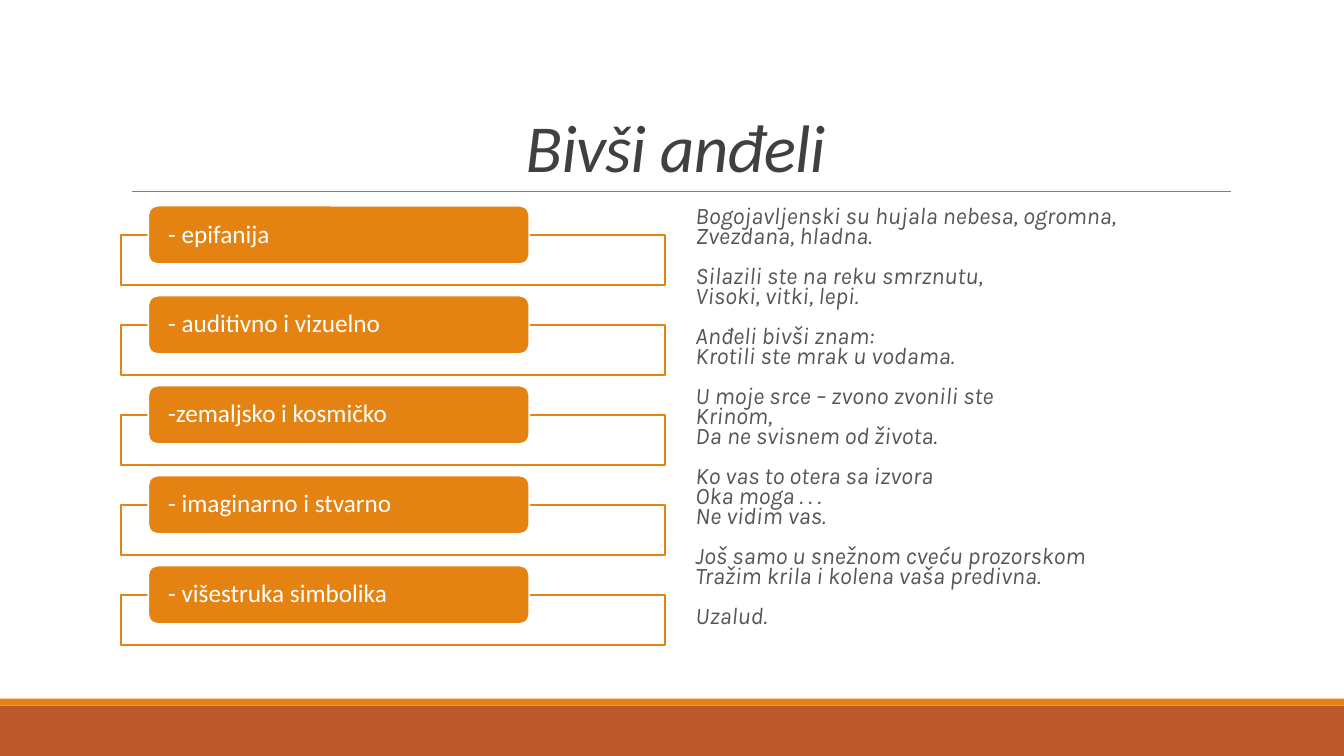
from dataclasses import dataclass

from lxml.etree import SubElement
from pptx import Presentation
from pptx.dml.color import RGBColor
from pptx.enum.shapes import MSO_CONNECTOR as CONN, MSO_SHAPE as SHAPE
from pptx.enum.text import MSO_ANCHOR as ANCHOR, PP_ALIGN as ALIGN
from pptx.oxml.ns import qn
from pptx.util import Inches, Pt


@dataclass(frozen=True)
class Theme:
    """Colours, fonts and type sizes of the slide."""
    accent: str = "E48312"
    footer: str = "BD582C"
    rule: str = "808080"
    title: str = "404040"
    body: str = "565656"
    white: str = "FFFFFF"
    font: str = "Calibri"
    verse_font: str = "Karla"
    title_pt: float = 48
    label_pt: float = 18
    verse_pt: float = 17
    stanza_gap_pt: float = 14.3


T = Theme()
W, H = 13.33, 7.5

TITLE = "Bivši anđeli"
MOTIFS = [
    "- epifanija",
    "- auditivno i vizuelno",
    "-zemaljsko i kosmičko",
    "- imaginarno i stvarno",
    "- višestruka simbolika",
]
STANZAS = [
    ["Bogojavljenski su hujala nebesa, ogromna,", "Zvezdana, hladna."],
    ["Silazili ste na reku smrznutu,", "Visoki, vitki, lepi."],
    ["Anđeli bivši znam:", "Krotili ste mrak u vodama."],
    ["U moje srce – zvono zvonili ste", "Krinom,", "Da ne svisnem od života."],
    ["Ko vas to otera sa izvora", "Oka moga . . .", "Ne vidim vas."],
    ["Još samo u snežnom cveću prozorskom", "Tražim krila i kolena vaša predivna."],
    ["Uzalud."],
]


def rgb(color):
    """Turn a hex string into a colour."""
    return RGBColor.from_string(color)


def add_box(slide, kind, box, fill, line=None):
    """Add a filled shape with an optional outline."""
    sp = slide.shapes.add_shape(kind, *map(Inches, box))
    sp.shadow.inherit = False
    sp.fill.solid()
    sp.fill.fore_color.rgb = rgb(fill)
    if line:
        sp.line.color.rgb = rgb(line)
        sp.line.width = Pt(1.25)
    else:
        sp.line.fill.background()
    return sp


def set_text(sp, text, font, size, color, spacing, anchor, insets, align=ALIGN.LEFT, italic=False):
    """Fill a shape with uniformly formatted text."""
    tf = sp.text_frame
    tf.word_wrap = True
    tf.vertical_anchor = anchor
    tf.margin_left = tf.margin_right = Inches(insets[0])
    tf.margin_top = tf.margin_bottom = Inches(insets[1])
    tf.text = text
    for p in tf.paragraphs:
        p.alignment = align
        p.line_spacing = spacing
        for r in p.runs:
            r.font.name = font
            r.font.size = Pt(size)
            r.font.italic = italic
            r.font.color.rgb = rgb(color)
    return tf


def add_footer(slide, x, y, w, h):
    """Draw the thin accent band above the footer band."""
    band = h / 8
    add_box(slide, SHAPE.RECTANGLE, (x, y + band, w, h - band), T.footer)
    add_box(slide, SHAPE.RECTANGLE, (x, y, w, band), T.accent)


def add_title(slide, x, y, w, h):
    """Set the title at the foot of its box, above a rule."""
    start, end, base = Inches(x + 0.11), Inches(x + w + 0.01), Inches(y + h)
    rule = slide.shapes.add_connector(CONN.STRAIGHT, start, base, end, base)
    rule.line.color.rgb = rgb(T.rule)
    rule.line.width = Pt(0.5)
    SubElement(rule._element.spPr, qn("a:effectLst"))
    sp = slide.shapes.add_textbox(*map(Inches, (x, y, w, h)))
    tf = set_text(sp, TITLE, T.font, T.title_pt, T.title, 0.85, ANCHOR.BOTTOM,
                  (0.1, 0.05), ALIGN.CENTER, italic=True)
    tf.paragraphs[0].runs[0].font._element.set("spc", "-50")


def add_motifs(slide, x, y, w, h):
    """Stack the motif labels, each over an outlined frame."""
    label_h, frame_h = 0.58, 0.5
    row_h = label_h / 2 + frame_h
    pitch = (h - row_h) / (len(MOTIFS) - 1)
    for i, motif in enumerate(MOTIFS):
        top = y + i * pitch
        frame = (x, top + label_h / 2, w, frame_h)
        add_box(slide, SHAPE.RECTANGLE, frame, T.white, T.accent)
        label = (x + 0.05 * w, top, 0.7 * w, label_h)
        sp = add_box(slide, SHAPE.ROUNDED_RECTANGLE, label, T.accent, T.white)
        set_text(sp, motif, T.font, T.label_pt, T.white, 0.9, ANCHOR.MIDDLE, (0.17, 0))


def add_poem(slide, x, y, w, h):
    """Set the poem with one paragraph per stanza."""
    sp = slide.shapes.add_textbox(*map(Inches, (x, y, w, h)))
    text = "\n".join("\v".join(lines) for lines in STANZAS)
    tf = set_text(sp, text, T.verse_font, T.verse_pt, T.body, 0.7, ANCHOR.TOP,
                  (0.1, 0.05), italic=True)
    for p in tf.paragraphs[1:]:
        p.space_before = Pt(T.stanza_gap_pt)


def main():
    """Build and save the slide."""
    prs = Presentation()
    prs.slide_width, prs.slide_height = Inches(W), Inches(H)
    slide = prs.slides.add_slide(prs.slide_layouts[6])
    left, col, gap = 1.2, 5.4, 0.2
    add_footer(slide, 0, 6.93, W, H - 6.93)
    add_title(slide, left, 0.31, 2 * col + gap, 1.59)
    add_motifs(slide, left, 2.04, col, 4.36)
    add_poem(slide, left + col + gap, 2.02, col, 4.4)
    prs.save("out.pptx")


if __name__ == "__main__":
    main()
